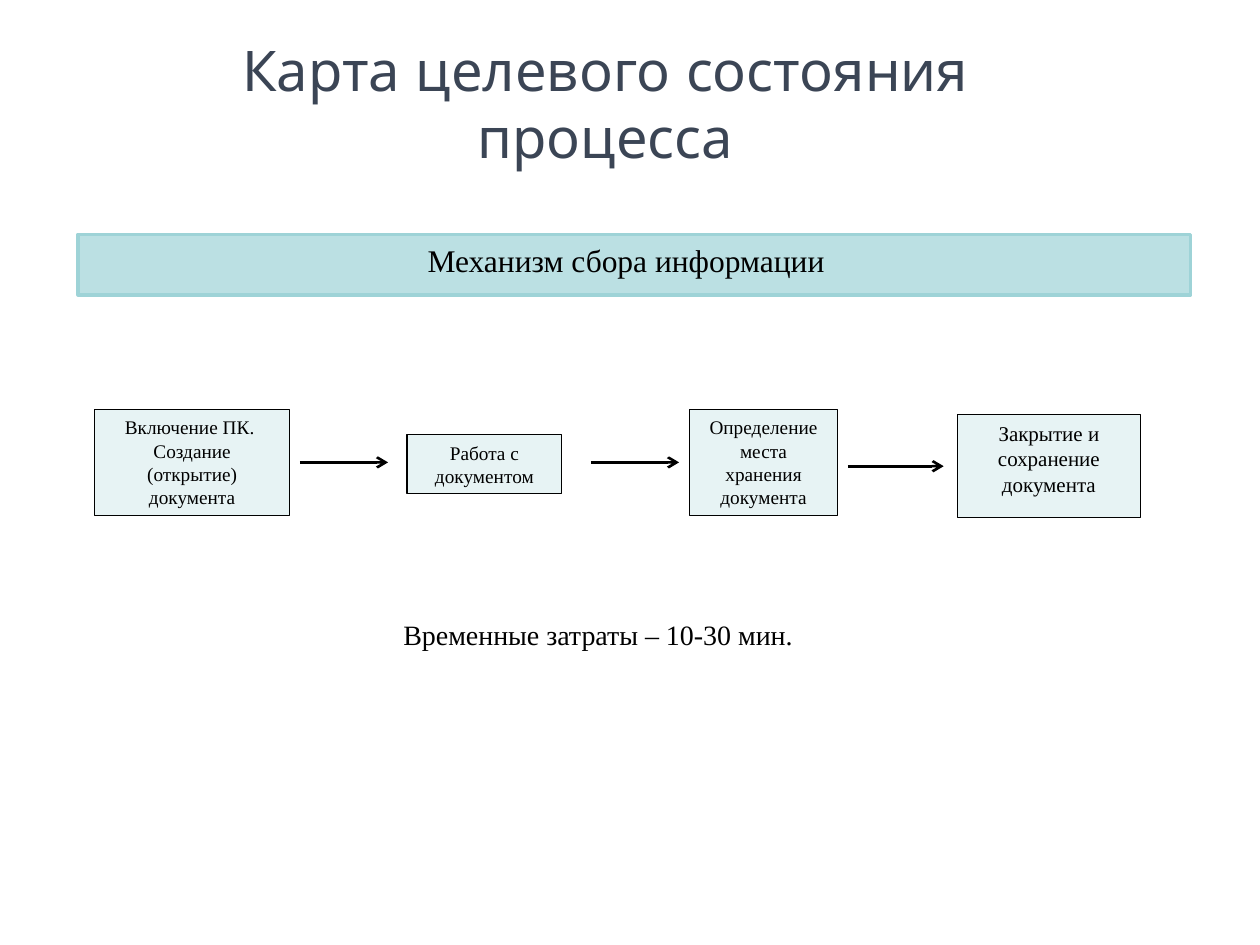
from lxml import etree
from pptx import Presentation, util as u
from pptx.dml.color import RGBColor
from pptx.enum import shapes, text
from pptx.oxml.ns import qn

BLACK = RGBColor(0x00, 0x00, 0x00)
SLATE = RGBColor(0x3B, 0x45, 0x55)
PALE = RGBColor(0xE7, 0xF3, 0xF4)
AQUA = RGBColor(0xBB, 0xE0, 0xE3)
TEAL = RGBColor(0x9E, 0xD3, 0xD7)
SERIF = "Times New Roman"


class Page:
    def __init__(self, slide, font=SERIF, ink=BLACK):
        self.slide = slide
        self.font = font
        self.ink = ink

    def words(self, shape, lines, size, font=None, ink=None):
        frame = shape.text_frame
        frame.word_wrap = True
        frame.vertical_anchor = text.MSO_ANCHOR.TOP
        for i, line in enumerate(lines):
            para = frame.add_paragraph() if i else frame.paragraphs[0]
            para.alignment = text.PP_ALIGN.CENTER
            run = para.add_run()
            run.text = line
            run.font.size = u.Pt(size)
            run.font.name = font or self.font
            run.font.color.rgb = ink or self.ink

    def label(self, spot, line, size, **style):
        shape = self.slide.shapes.add_textbox(*map(u.Inches, spot))
        self.words(shape, [line], size, **style)

    def box(self, spot, lines, size, fill=PALE, edge=BLACK, width=0.75):
        shape = self.slide.shapes.add_shape(
            shapes.MSO_SHAPE.RECTANGLE, *map(u.Inches, spot))
        shape.shadow.inherit = False
        shape.fill.solid()
        shape.fill.fore_color.rgb = fill
        shape.line.color.rgb = edge
        shape.line.width = u.Pt(width)
        self.words(shape, lines, size)
        return shape

    def arrow(self, left, right, y):
        link = self.slide.shapes.add_connector(
            shapes.MSO_CONNECTOR.STRAIGHT,
            *map(u.Inches, (left, y, right, y)))
        link.line.color.rgb = self.ink
        link.line.width = u.Pt(1.5)
        props = link._element.spPr
        etree.SubElement(props.find(qn("a:ln")), qn("a:tailEnd"), type="arrow")
        etree.SubElement(props, qn("a:effectLst"))


def main():
    deck = Presentation()
    deck.slide_width, deck.slide_height = u.Inches(10), u.Inches(7.5)
    page = Page(deck.slides.add_slide(deck.slide_layouts[6]))

    page.label((0.94, 0.23, 7.73, 1.04), "Карта целевого состояния процесса",
               32, font="Quicksand", ink=SLATE)
    banner = page.box((0.62, 1.86, 8.83, 0.48), ["Механизм сбора информации"],
                      18, AQUA, TEAL, 2)
    banner.text_frame.margin_right = u.Inches(0.23)

    steps = [
        ((0.75, 3.25, 1.55, 0.84),
         ["Включение ПК. ", "Создание (открытие) документа"], 11),
        ((3.23, 3.45, 1.23, 0.47), ["Работа с документом"], 11),
        ((5.47, 3.25, 1.18, 0.84), ["Определение места хранения документа"], 11),
        ((7.6, 3.29, 1.45, 0.82), ["Закрытие и сохранение документа"], 12),
    ]
    for step in steps:
        page.box(*step)
    for link in [(2.38, 3.08, 3.67), (4.69, 5.39, 3.67), (6.73, 7.49, 3.7)]:
        page.arrow(*link)

    page.label((3.08, 4.85, 3.39, 0.37), "Временные затраты – 10-30 мин. ", 16)
    deck.save("out.pptx")


if __name__ == "__main__":
    main()
